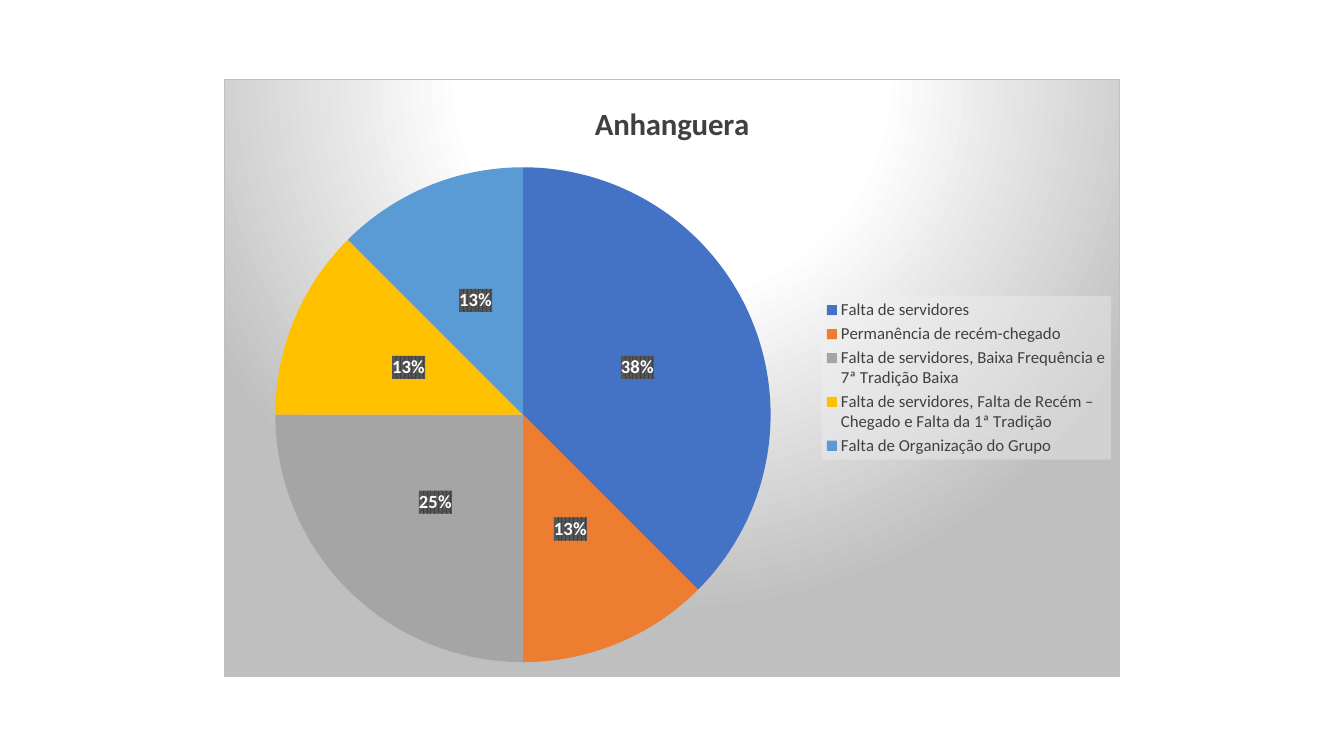
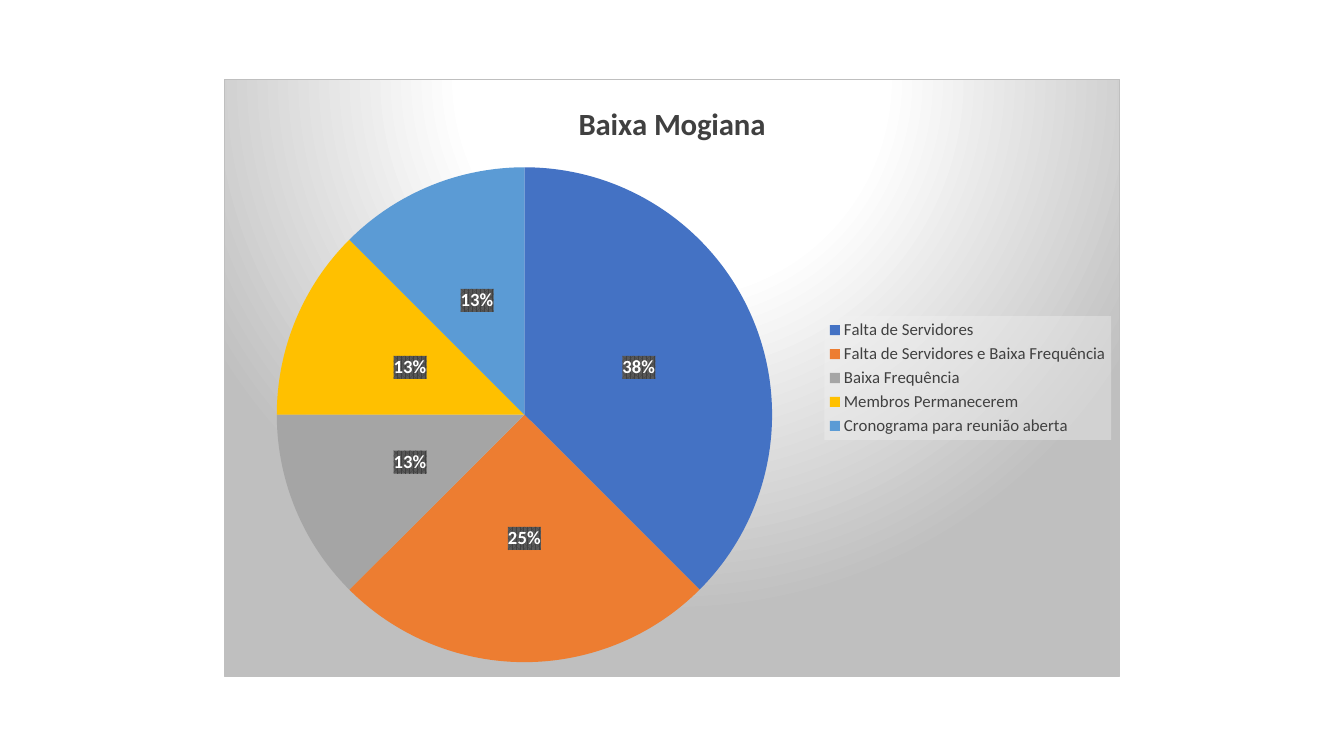
from dataclasses import dataclass

from lxml import etree
from pptx import Presentation
from pptx.chart.data import CategoryChartData
from pptx.dml.color import RGBColor
from pptx.enum.chart import XL_CHART_TYPE as ChartType
from pptx.enum.chart import XL_LABEL_POSITION as LabelPos
from pptx.enum.chart import XL_LEGEND_POSITION as LegendPos
from pptx.util import Inches, Pt

NS = ('xmlns:c="http://schemas.openxmlformats.org/drawingml/2006/chart" '
      'xmlns:a="http://schemas.openxmlformats.org/drawingml/2006/main"')


@dataclass(frozen=True)
class Theme:
    font: str = "Calibri"
    text: str = "404040"
    base: str = "000000"
    light: str = "FFFFFF"
    edge: str = "BFBFBF"
    legend_fill: str = "F2F2F2"
    label_dots: str = "595959"
    slices: tuple = ("4472C4", "ED7D31", "A5A5A5", "FFC000", "5B9BD5")
    title_size: float = 22
    label_size: float = 13.3
    legend_size: float = 12
    base_size: float = 10


T = Theme()

# Whole numbers in exact eighths, so that the labels round to 38%, 25% and 13%.
PIES = [
    ("Anhanguera", {
        "Falta de servidores": 36,
        "Permanência de recém-chegado": 12,
        "Falta de servidores, Baixa Frequência e 7ª Tradição Baixa": 24,
        "Falta de servidores, Falta de Recém – Chegado e Falta da 1ª Tradição": 12,
        "Falta de Organização do Grupo": 12,
    }),
    ("Baixa Mogiana", {
        "Falta de Servidores": 36,
        "Falta de Servidores e Baixa Frequência": 24,
        "Baixa Frequência": 12,
        "Membros Permanecerem": 12,
        "Cronograma para reunião aberta": 12,
    }),
]


def rgb(color):
    return f'<a:srgbClr val="{color}"/>'


PANEL = (
    '<a:gradFill><a:gsLst>'
    + "".join(f'<a:gs pos="{pos}">{rgb(color)}</a:gs>'
              for pos, color in ((0, T.light), (39000, T.light), (100000, T.edge)))
    + '</a:gsLst><a:path path="circle">'
    '<a:fillToRect l="50000" t="-80000" r="50000" b="180000"/></a:path></a:gradFill>'
    f'<a:ln w="9525"><a:solidFill>{rgb(T.edge)}</a:solidFill></a:ln>')
LEGEND = (f'<a:solidFill><a:srgbClr val="{T.legend_fill}"><a:alpha val="39000"/>'
          '</a:srgbClr></a:solidFill><a:ln><a:noFill/></a:ln>')
LABEL = (f'<a:pattFill prst="pct75"><a:fgClr>{rgb(T.text)}</a:fgClr>'
         f'<a:bgClr>{rgb(T.label_dots)}</a:bgClr></a:pattFill><a:ln><a:noFill/></a:ln>')


def style_font(font, size, color, bold=False):
    font.name, font.size, font.bold = T.font, Pt(size), bold
    font.color.rgb = RGBColor.from_string(color)


def set_background(element, body):
    """Fill a chart part; its font must be set first, as spPr precedes txPr."""
    sp_pr = etree.fromstring(f"<c:spPr {NS}>{body}</c:spPr>")
    element.find("{*}txPr").addprevious(sp_pr)


def add_title(chart, title):
    chart.has_title = True
    p = chart.chart_title.text_frame.paragraphs[0]
    p.text = title
    style_font(p.runs[0].font, T.title_size, T.text, bold=True)
    chart.chart_title.include_in_layout = False


def add_legend(chart):
    chart.has_legend = True
    legend = chart.legend
    legend.position = LegendPos.RIGHT
    legend.include_in_layout = False
    style_font(legend.font, T.legend_size, T.text)
    set_background(legend._element, LEGEND)


def style_slices(plot):
    plot.vary_by_categories = True
    for i, color in enumerate(T.slices):
        fill = plot.series[0].points[i].format.fill
        fill.solid()
        fill.fore_color.rgb = RGBColor.from_string(color)
    labels = plot.series[0].data_labels
    labels.show_percentage = True
    labels.show_value = False
    labels.number_format, labels.number_format_is_linked = "0%", False
    labels.position = LabelPos.CENTER
    style_font(labels.font, T.label_size, T.light, bold=True)
    set_background(labels._element, LABEL)


def add_pie(s, box, title, shares):
    data = CategoryChartData()
    data.categories = list(shares)
    data.add_series(title, list(shares.values()))
    chart = s.shapes.add_chart(ChartType.PIE, *box, data).chart
    style_font(chart.font, T.base_size, T.base)
    set_background(chart._chartSpace, PANEL)
    add_title(chart, title)
    add_legend(chart)
    style_slices(chart.plots[0])


def centred_box(prs):
    """Two thirds of the slide's width, in 3:2 proportion."""
    w = prs.slide_width * 2 // 3
    h = w * 2 // 3
    return (prs.slide_width - w) // 2, (prs.slide_height - h) // 2, w, h


def main():
    prs = Presentation()
    prs.slide_width, prs.slide_height = Inches(13.33), Inches(7.5)
    for title, shares in PIES:
        s = prs.slides.add_slide(prs.slide_layouts[6])
        add_pie(s, centred_box(prs), title, shares)
    prs.save("out.pptx")


if __name__ == "__main__":
    main()
